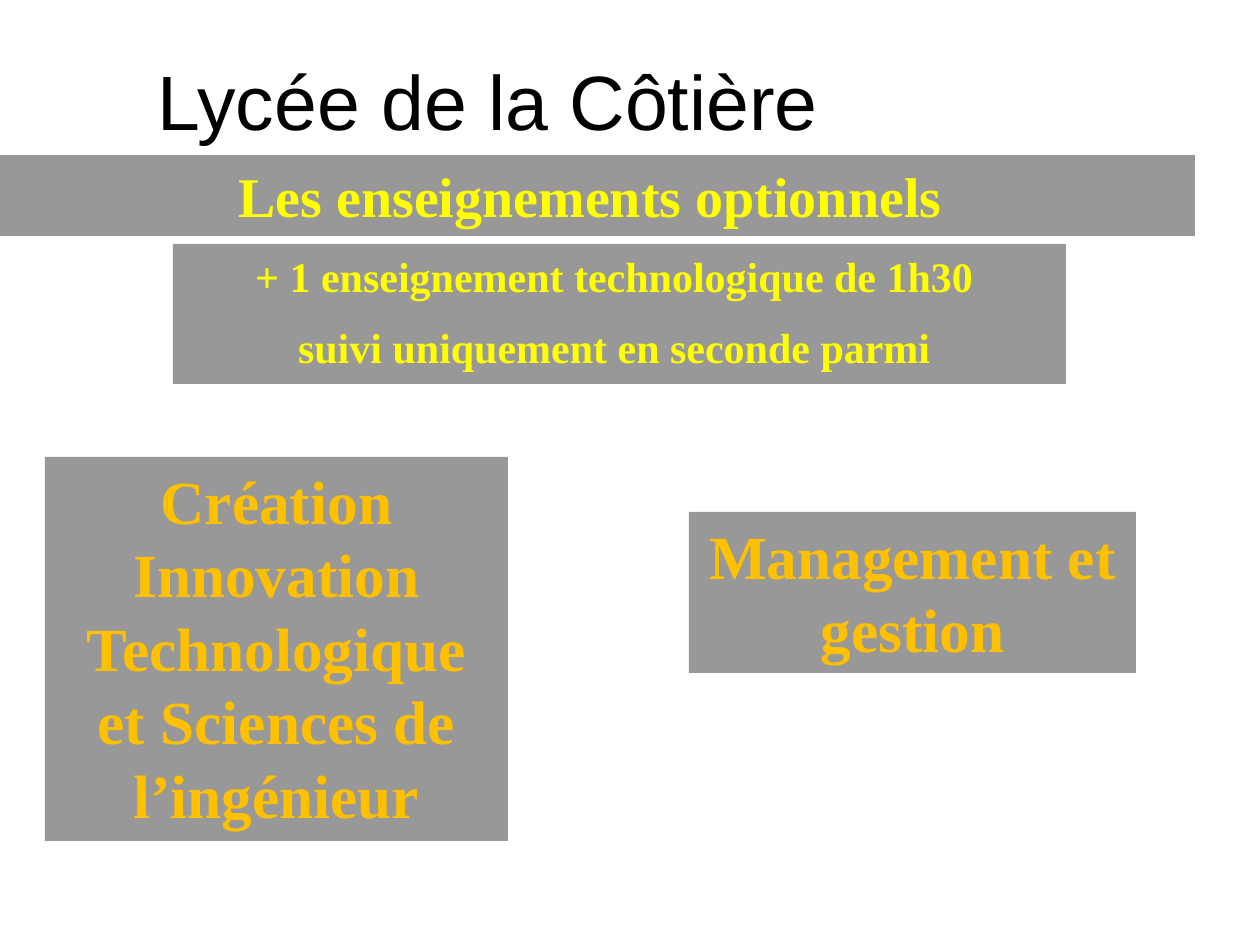
from dataclasses import dataclass

from lxml.etree import SubElement
from pptx import Presentation
from pptx.dml.color import RGBColor
from pptx.enum.shapes import MSO_SHAPE as Shape
from pptx.enum.text import MSO_ANCHOR as Anchor, PP_ALIGN as Align
from pptx.oxml.ns import qn
from pptx.util import Emu, Pt

EMU_PER_PX = 914400 // 126


@dataclass(frozen=True)
class Theme:
    black: str = "000000"
    panel: str = "333333"
    yellow: str = "FFFF00"
    orange: str = "FFC000"
    panel_opacity: int = 50
    title_font: str = "Arial"
    body_font: str = "Times New Roman"
    title_size: int = 44
    heading_size: int = 32
    intro_size: int = 24
    subject_size: int = 35
    leading: float = 1.2


def px(*lengths):
    return [Emu(length * EMU_PER_PX) for length in lengths]


def write(box, text, *, font, size, color, leading, bold=False, anchor=Anchor.TOP):
    """Write centred text, one paragraph per line of the string."""
    frame = box.text_frame
    frame.word_wrap = True
    frame.vertical_anchor = anchor
    for index, line in enumerate(text.split("\n")):
        para = frame.add_paragraph() if index else frame.paragraphs[0]
        para.alignment = Align.CENTER
        para.line_spacing = Pt(size * leading)
        para.space_before = Pt(size / 2 if index else 0)
        span = para.add_run()
        span.text = line
        span.font.name = font
        span.font.size = Pt(size)
        span.font.bold = bold
        span.font.color.rgb = RGBColor.from_string(color)


class SlideBuilder:
    def __init__(self, page, theme):
        self.page = page
        self.theme = theme

    def title(self, text, *area):
        theme = self.theme
        box = self.page.shapes.add_textbox(*px(*area))
        write(box, text, font=theme.title_font, size=theme.title_size,
              color=theme.black, leading=theme.leading, anchor=Anchor.MIDDLE)

    def panel(self, text, *area, size, color):
        theme = self.theme
        box = self.page.shapes.add_shape(Shape.RECTANGLE, *px(*area))
        box.shadow.inherit = False
        box.line.fill.background()
        box.fill.solid()
        box.fill.fore_color.rgb = RGBColor.from_string(theme.panel)
        fill_color = box.fill._xPr.find(qn("a:solidFill"))[0]
        SubElement(fill_color, qn("a:alpha"), val=str(theme.panel_opacity * 1000))
        write(box, text, font=theme.body_font, size=size, color=color,
              leading=theme.leading, bold=True)


def main():
    theme = Theme()
    deck = Presentation()
    deck.slide_width, deck.slide_height = px(1260, 945)
    slide = SlideBuilder(deck.slides.add_slide(deck.slide_layouts[6]), theme)

    # School name and headings
    slide.title("Lycée de la Côtière", 42, 21, 892, 158)
    slide.panel("Les enseignements optionnels ", 0, 155, 1195, 81,
                size=theme.heading_size, color=theme.yellow)
    slide.panel("+ 1 enseignement technologique de 1h30 \n"
                "suivi uniquement en seconde parmi ", 173, 244, 893, 140,
                size=theme.intro_size, color=theme.yellow)

    # Subjects to choose from
    subjects = [
        ("Management et gestion", 689, 512, 447, 161),
        ("Création Innovation Technologique et Sciences de l’ingénieur",
         45, 457, 463, 384),
    ]
    for text, *area in subjects:
        slide.panel(text, *area, size=theme.subject_size, color=theme.orange)

    deck.save("out.pptx")


if __name__ == "__main__":
    main()
